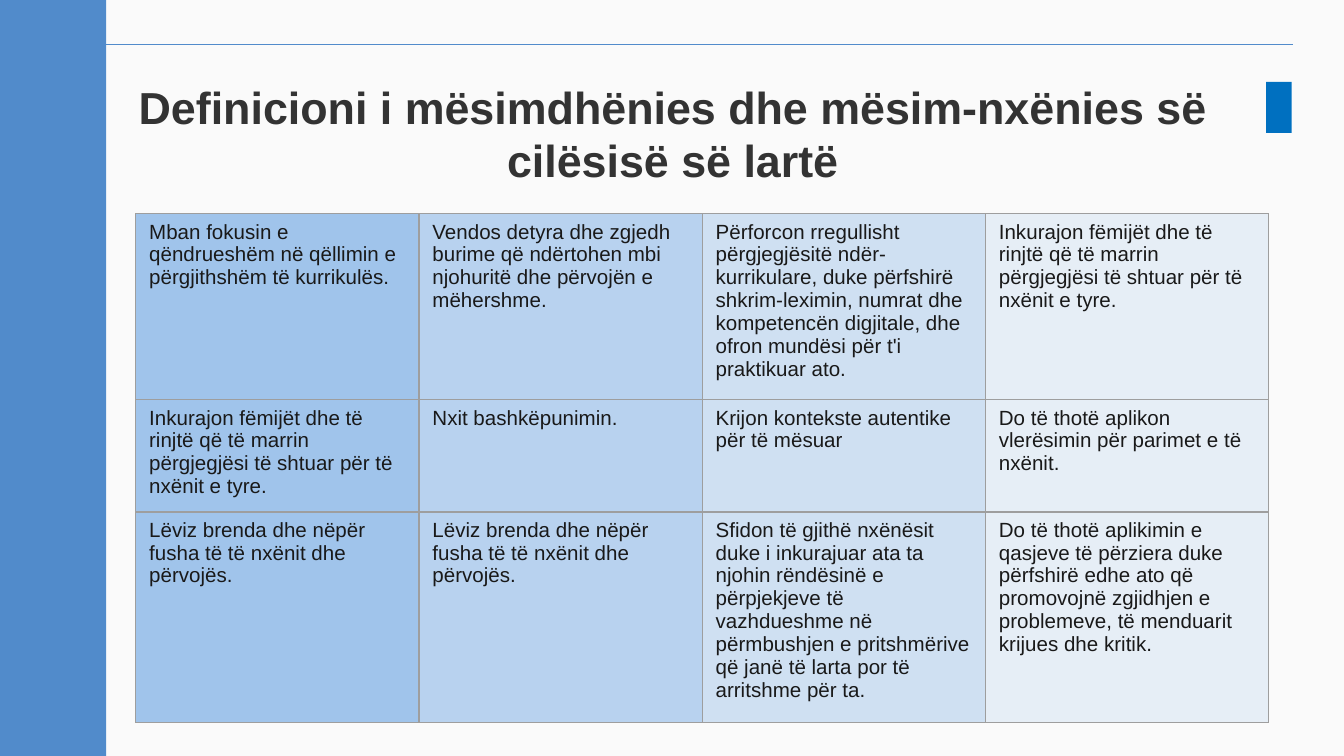
from dataclasses import dataclass

from lxml.etree import SubElement
from pptx import Presentation
from pptx.dml.color import RGBColor
from pptx.enum.shapes import MSO_CONNECTOR, MSO_SHAPE
from pptx.enum.text import MSO_ANCHOR, PP_ALIGN
from pptx.oxml.ns import qn
from pptx.util import Inches, Pt

WIDTH = 10
HEIGHT = WIDTH * 9 / 16
COLORS = {
    "background": "FAFAFA",
    "band": "518BCB",
    "marker": "0070C0",
    "title": "333333",
    "text": "191919",
    "cell": "86B5E7",
    "border": "9E9E9E",
}
FONT = "Arial"
BAND_WIDTH = 0.79
CONTENT_WIDTH = 8.43
TABLE_LEFT, TABLE_TOP, TABLE_HEIGHT = 1.01, 1.59, 3.78
MIN_ROW_HEIGHT = 0.41
COLUMN_OPACITY = (77, 57, 37, 17)
ENCOURAGE = "Inkurajon fëmijët dhe të rinjtë që të marrin përgjegjësi të shtuar për të nxënit e tyre."
MOVE = "Lëviz brenda dhe nëpër fusha të të nxënit dhe përvojës."
ROWS = (
    (
        "Mban fokusin e qëndrueshëm në qëllimin e përgjithshëm të kurrikulës.",
        "Vendos detyra dhe zgjedh burime që ndërtohen mbi njohuritë dhe përvojën e mëhershme.",
        "Përforcon rregullisht përgjegjësitë ndër-kurrikulare, duke përfshirë shkrim-leximin, "
        "numrat dhe kompetencën digjitale, dhe ofron mundësi për t'i praktikuar ato.",
        ENCOURAGE,
    ),
    (
        ENCOURAGE,
        "Nxit bashkëpunimin.",
        "Krijon kontekste autentike për të mësuar",
        "Do të thotë aplikon vlerësimin për parimet e të nxënit.",
    ),
    (
        MOVE,
        MOVE,
        "Sfidon të gjithë nxënësit duke i inkurajuar ata ta njohin rëndësinë e përpjekjeve të "
        "vazhdueshme në përmbushjen e pritshmërive që janë të larta por të arritshme për ta.",
        "Do të thotë aplikimin e qasjeve të përziera duke përfshirë edhe ato që promovojnë "
        "zgjidhjen e problemeve, të menduarit krijues dhe kritik.",
    ),
)


@dataclass(frozen=True)
class Block:
    left: float
    top: float
    width: float
    height: float
    color: str


BLOCKS = (
    Block(0, 0, BAND_WIDTH, HEIGHT, "band"),
    Block(9.42, 0.61, 0.19, 0.38, "marker"),
)


def rgb(name: str) -> RGBColor:
    return RGBColor.from_string(COLORS[name])


def write(tf, text: str, *, size: float, color: str, bold: bool = False,
          align=PP_ALIGN.LEFT) -> None:
    tf.word_wrap = True
    p = tf.paragraphs[0]
    p.alignment = align
    r = p.add_run()
    r.text = text
    r.font.name, r.font.size, r.font.bold = FONT, Pt(size), bold
    r.font.color.rgb = rgb(color)


def add_block(s, block: Block) -> None:
    sp = s.shapes.add_shape(MSO_SHAPE.RECTANGLE, Inches(block.left), Inches(block.top),
                            Inches(block.width), Inches(block.height))
    sp.shadow.inherit = False
    sp.fill.solid()
    sp.fill.fore_color.rgb = rgb(block.color)
    sp.line.fill.background()


def add_rule(s) -> None:
    y = Inches(0.33)
    line = s.shapes.add_connector(MSO_CONNECTOR.STRAIGHT, Inches(0.05), y, Inches(9.62), y)
    line.line.color.rgb = rgb("band")
    line.line.width = Pt(0.75)
    SubElement(line._element.spPr, qn("a:effectLst"))


def add_title(s) -> None:
    sp = s.shapes.add_textbox(Inches(BAND_WIDTH), Inches(0.49),
                              Inches(CONTENT_WIDTH), Inches(0.63))
    tf = sp.text_frame
    tf.margin_left = tf.margin_right = tf.margin_top = tf.margin_bottom = Inches(0.1)
    tf.vertical_anchor = MSO_ANCHOR.TOP
    write(tf, "Definicioni i mësimdhënies dhe mësim-nxënies së cilësisë së lartë",
          size=24, color="title", bold=True, align=PP_ALIGN.CENTER)


def style_cell(cell, opacity: int) -> None:
    """Give the cell thin borders and a see-through fill."""
    tc_pr = cell._tc.get_or_add_tcPr()
    for side in ("lnL", "lnR", "lnT", "lnB"):
        ln = SubElement(tc_pr, qn(f"a:{side}"), w=str(Pt(0.75)))
        SubElement(SubElement(ln, qn("a:solidFill")), qn("a:srgbClr"), val=COLORS["border"])
    fill = SubElement(tc_pr, qn("a:solidFill"))
    color = SubElement(fill, qn("a:srgbClr"), val=COLORS["cell"])
    SubElement(color, qn("a:alpha"), val=str(opacity * 1000))


def add_practice_table(s) -> None:
    frame = s.shapes.add_table(len(ROWS), len(COLUMN_OPACITY), Inches(TABLE_LEFT),
                               Inches(TABLE_TOP), Inches(CONTENT_WIDTH), Inches(TABLE_HEIGHT))
    table = frame.table
    table.first_row = table.horz_banding = False
    for i, texts in enumerate(ROWS):
        table.rows[i].height = Inches(MIN_ROW_HEIGHT)
        for j, (text, opacity) in enumerate(zip(texts, COLUMN_OPACITY)):
            cell = table.cell(i, j)
            style_cell(cell, opacity)
            write(cell.text_frame, text, size=11, color="text")
    frame.height = Inches(TABLE_HEIGHT)


def main() -> None:
    prs = Presentation()
    prs.slide_width, prs.slide_height = Inches(WIDTH), Inches(HEIGHT)
    s = prs.slides.add_slide(prs.slide_layouts[6])
    s.background.fill.solid()
    s.background.fill.fore_color.rgb = rgb("background")
    add_rule(s)
    for block in BLOCKS:
        add_block(s, block)
    add_title(s)
    add_practice_table(s)
    prs.save("out.pptx")


if __name__ == "__main__":
    main()
